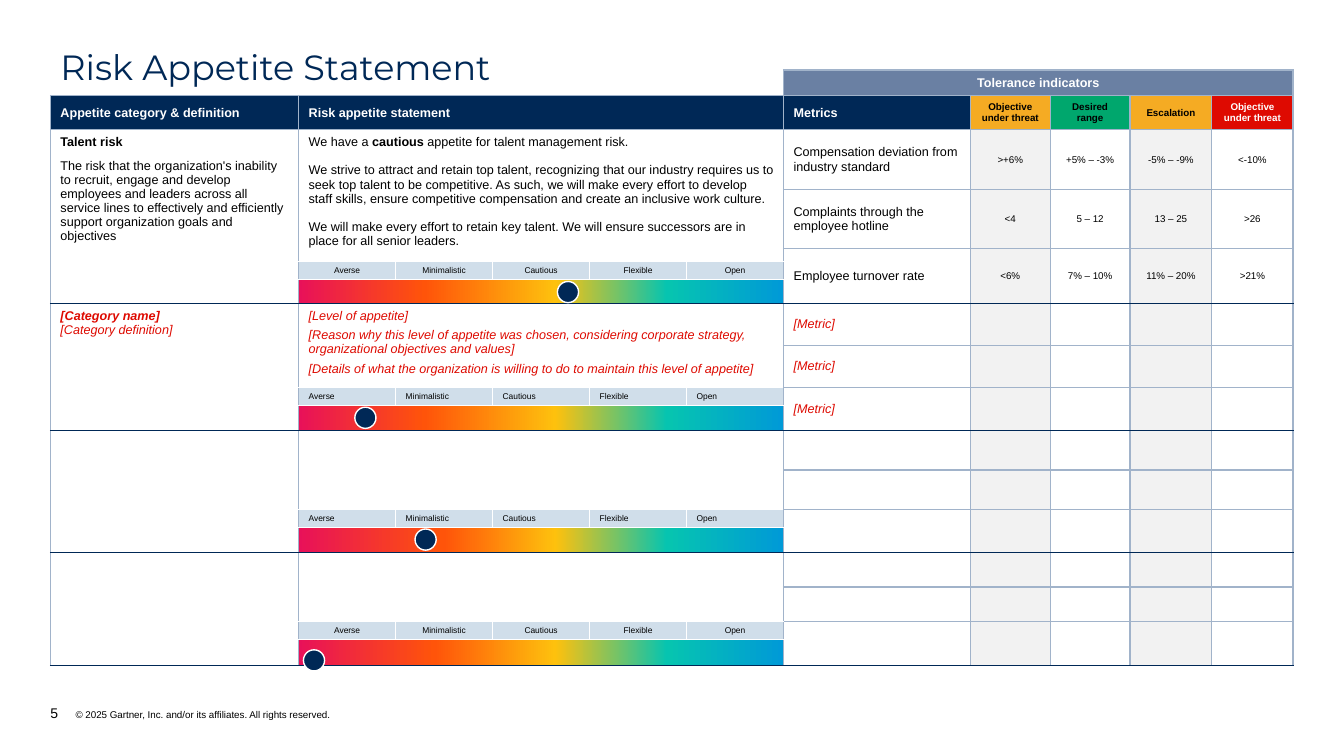
from dataclasses import dataclass

from lxml.etree import SubElement as Sub
from pptx import Presentation
from pptx.dml.color import RGBColor as Rgb
from pptx.enum.shapes import MSO_SHAPE as Shape
from pptx.enum.text import MSO_ANCHOR as Anchor, MSO_AUTO_SIZE as Auto, PP_ALIGN as Align
from pptx.oxml.ns import qn
from pptx.table import Table, _Cell as Cell
from pptx.text.text import TextFrame as Frame
from pptx.util import Pt

NAVY = Rgb(0x00, 0x28, 0x56)
SLATE = Rgb(0x6A, 0x80, 0xA3)
RULE = Rgb(0xA1, 0xB3, 0xCA)
PALE = Rgb(0xD0, 0xDE, 0xEA)
GREY = Rgb(0xF2, 0xF2, 0xF2)
WHITE = Rgb(0xFF, 0xFF, 0xFF)
BLACK = Rgb(0x00, 0x00, 0x00)
AMBER = Rgb(0xF5, 0xAB, 0x23)
GREEN = Rgb(0x00, 0xA7, 0x6D)
RED = Rgb(0xDE, 0x0A, 0x01)
SCALE = [Rgb(0xE8, 0x11, 0x59), Rgb(0xFF, 0x54, 0x0A), Rgb(0xFE, 0xC1, 0x0D),
         Rgb(0x06, 0xC4, 0xB0), Rgb(0x00, 0x9A, 0xD7)]

COLS = [177.3] + [69.3] * 5 + [133.5, 57, 57, 58.5, 58]
ROWS = [18.2, 24.6, 42.5, 42.2, 9.3, 12.9, 17.2, 30, 30, 12.9, 17.9,
        28.2, 28.2, 12.9, 17.9, 24.6, 24.6, 0, 12.9, 18.2]
LEFT, TOP = 36, 50
LEVELS = ["Averse", "Minimalistic", "Cautious", "Flexible", "Open"]
KNOB = 15.1


@dataclass
class Para:
    text: str  # words between asterisks are bold
    gap: float = 0
    bold: bool = False


@dataclass
class Look:
    size: float = 9
    color: Rgb = BLACK
    italic: bool = False
    align: Align = Align.LEFT
    anchor: Anchor = Anchor.MIDDLE
    pad: float = 3.6


@dataclass
class Edge:
    left: Rgb = RULE
    right: Rgb = RULE
    top: Rgb = RULE
    bottom: Rgb = RULE


@dataclass
class Risk:
    top: int  # first table row
    lead: int  # rows above the scale labels
    stop: int  # place of the orange in the scale, percent
    knob: tuple[float, float]  # centre of the marker
    align: Align
    color: Rgb
    italic: bool
    name: list[Para]
    claim: list[Para]
    grid: list[list[str]]


@dataclass
class Head:
    col: int
    wide: int
    text: str
    fill: Rgb
    look: Look


def write(frame: Frame, paras: list[Para], look: Look) -> None:
    for n, item in enumerate(paras):
        para = frame.paragraphs[0] if n == 0 else frame.add_paragraph()
        bits = item.text.split("*")
        para.text = bits[0]
        for bit in bits[1:]:
            para.add_run().text = bit
        para.alignment = look.align
        if n and item.gap:
            para.space_before = Pt(item.gap)
        for k, run in enumerate(para.runs):
            font = run.font
            font.name, font.size = "Arial", Pt(look.size)
            font.color.rgb = look.color
            font.bold = item.bold or k % 2 == 1
            font.italic = look.italic
        if not item.text:
            para._p.get_or_add_endParaRPr().set("sz", "600")


def rule(cell: Cell, edge: Edge) -> None:
    prop = cell._tc.get_or_add_tcPr()
    sides = [("L", edge.left), ("R", edge.right), ("T", edge.top), ("B", edge.bottom)]
    for n, (side, color) in enumerate(sides):
        line = Sub(prop, qn("a:ln" + side), w=str(Pt(1)))
        Sub(Sub(line, qn("a:solidFill")), qn("a:srgbClr"), val=str(color))
        prop.insert(n, line)


def blend(cell: Cell, stop: int) -> None:
    grad = Sub(cell._tc.get_or_add_tcPr(), qn("a:gradFill"), rotWithShape="1")
    stops = Sub(grad, qn("a:gsLst"))
    for pos, color in zip([0, stop, 53, 76, 100], SCALE):
        mark = Sub(stops, qn("a:gs"), pos=str(pos * 1000))
        Sub(mark, qn("a:srgbClr"), val=str(color))
    Sub(grad, qn("a:lin"), ang="0", scaled="0")


def put(table: Table, row: int, col: int, high: int, wide: int, paras: list[Para],
        fill: Rgb | int, look: Look, edge: Edge) -> None:
    cell = table.cell(row, col)
    if high * wide > 1:
        cell.merge(table.cell(row + high - 1, col + wide - 1))
    cell.margin_left = cell.margin_right = Pt(7.2)
    cell.margin_top = cell.margin_bottom = Pt(look.pad)
    cell.vertical_anchor = look.anchor
    write(cell.text_frame, paras, look)
    if isinstance(fill, Rgb):
        cell.fill.solid()
        cell.fill.fore_color.rgb = fill
    else:
        blend(cell, fill)
    rule(cell, edge)


def draw(table: Table, risk: Risk) -> None:
    roof = RULE if risk.top == 2 else NAVY
    label = risk.top + risk.lead
    body = Look(9, risk.color, risk.italic, anchor=Anchor.TOP)
    put(table, risk.top, 0, risk.lead + 2, 1, risk.name, WHITE, body, Edge(top=roof, bottom=NAVY))
    put(table, risk.top, 1, risk.lead, 5, risk.claim, WHITE, body, Edge(top=roof, bottom=WHITE))
    # Scale
    tag = Look(6, align=risk.align, pad=2.88)
    for n, level in enumerate(LEVELS):
        put(table, label, 1 + n, 1, 1, [Para(level)], PALE, tag,
            Edge(RULE if n == 0 else WHITE, WHITE, WHITE, WHITE))
    put(table, label + 1, 1, 1, 5, [Para("")], risk.stop, tag, Edge(top=WHITE, bottom=NAVY))
    # Metrics
    for n, line in enumerate(risk.grid):
        last = n == 2
        edge = Edge(top=roof if n == 0 else RULE, bottom=NAVY if last else RULE)
        for k, text in enumerate(line):
            look = Look(7, align=Align.CENTER) if k else Look(9, risk.color, risk.italic)
            put(table, risk.top + n, 6 + k, risk.lead if last else 1, 1, [Para(text)],
                GREY if k % 2 else WHITE, look, edge)


SMALL = Look(7, align=Align.CENTER)
BIG = Look(color=WHITE)
HEADS = [
    Head(0, 1, "Appetite category & definition", NAVY, BIG),
    Head(1, 5, "Risk appetite statement", NAVY, BIG),
    Head(6, 1, "Metrics", NAVY, BIG),
    Head(7, 1, "Objective under threat", AMBER, SMALL),
    Head(8, 1, "Desired range", GREEN, SMALL),
    Head(9, 1, "Escalation", AMBER, SMALL),
    Head(10, 1, "Objective under threat", RED, Look(7, WHITE, align=Align.CENTER)),
]
NONE = [Para("")]
VOID = [[""] * 5] * 3
RISKS = [
    Risk(2, 3, 26, (405.7, 208.6), Align.CENTER, BLACK, False,
         [Para("Talent risk", bold=True),
          Para("The risk that the organization's inability to recruit, engage and develop employees and leaders across all service lines to effectively and efficiently support organization goals and objectives", 6.9)],
         [Para("We have a *cautious *appetite for talent management risk."),
          Para("We strive to attract and retain top talent, recognizing that our industry requires us to seek top talent to be competitive. As such, we will make every effort to develop staff skills, ensure competitive compensation and create an inclusive work culture.", 10.3),
          Para("We will make every effort to retain key talent. We will ensure successors are in place for all senior leaders.", 10.3)],
         [["Compensation deviation from industry standard", ">+6%", "+5% – -3%", "-5% – -9%", "<-10%"],
          ["Complaints through the employee hotline", "<4", "5 – 12", "13 – 25", ">26"],
          ["Employee turnover rate", "<6%", "7% – 10%", "11% – 20%", ">21%"]]),
    Risk(7, 2, 26, (261, 298.4), Align.LEFT, RED, True,
         [Para("[Category name]", bold=True), Para("[Category definition]")],
         [Para("[Level of appetite]"),
          Para("[Reason why this level of appetite was chosen, considering corporate strategy, organizational objectives and values]", 4),
          Para("[Details of what the organization is willing to do to maintain this level of appetite]", 4)],
         [["[Metric]", "", "", "", ""]] * 3),
    Risk(11, 2, 30, (304, 385.4), Align.LEFT, BLACK, False, NONE, NONE, VOID),
    Risk(15, 3, 28, (224.3, 471.7), Align.CENTER, BLACK, False, NONE, NONE, VOID),
]


def main() -> None:
    deck = Presentation()
    deck.slide_width, deck.slide_height = Pt(960), Pt(540)
    slide = deck.slides.add_slide(deck.slide_layouts[5])
    shapes = slide.shapes

    # Table
    table = shapes.add_table(len(ROWS), len(COLS), Pt(LEFT), Pt(TOP),
                             Pt(sum(COLS)), Pt(sum(ROWS))).table
    table.first_row = table.horz_banding = False
    for col, width in zip(table.columns, COLS):
        col.width = Pt(width)
    for row, height in zip(table.rows, ROWS):
        row.height = Pt(height)
    put(table, 0, 0, 1, 6, NONE, WHITE, BIG, Edge(left=WHITE, top=WHITE))
    put(table, 0, 6, 1, 5, [Para("Tolerance indicators", bold=True)], SLATE,
        Look(color=WHITE, align=Align.CENTER), Edge())
    for head in HEADS:
        put(table, 1, head.col, 1, head.wide, [Para(head.text, bold=True)],
            head.fill, head.look, Edge())
    for risk in RISKS:
        draw(table, risk)

    # Title, in front of the table
    title = shapes.title
    title.left, title.top, title.width, title.height = Pt(36), Pt(32.4), Pt(887.8), Pt(41.8)
    frame = title.text_frame
    frame.text = "Risk Appetite Statement"
    frame.auto_size, frame.vertical_anchor = Auto.NONE, Anchor.TOP
    para = frame.paragraphs[0]
    para.alignment, para.line_spacing = Align.LEFT, 0.9
    font = para.runs[0].font
    font.name, font.size, font.color.rgb = "Montserrat", Pt(25), NAVY
    shapes._spTree.append(title._element)

    # Markers
    for risk in RISKS:
        x, y = risk.knob
        knob = shapes.add_shape(Shape.OVAL, Pt(x - KNOB / 2), Pt(y - KNOB / 2), Pt(KNOB), Pt(KNOB))
        knob.shadow.inherit = False
        knob.fill.solid()
        knob.fill.fore_color.rgb = NAVY
        knob.line.color.rgb, knob.line.width = WHITE, Pt(1)

    # Footer
    frame = shapes.add_textbox(Pt(36), Pt(503.3), Pt(575.3), Pt(12.2)).text_frame
    frame.word_wrap, frame.vertical_anchor = True, Anchor.BOTTOM
    frame.margin_left = frame.margin_right = frame.margin_top = frame.margin_bottom = 0
    para = frame.paragraphs[0]
    para.text = "5"
    para.add_run().text = "\t© 2025 Gartner, Inc. and/or its affiliates. All rights reserved."
    prop = para._p.get_or_add_pPr()
    prop.set("marL", str(Pt(18)))
    prop.set("indent", str(Pt(-18)))
    for run, size in zip(para.runs, [10, 7]):
        run.font.name, run.font.size, run.font.color.rgb = "Arial", Pt(size), BLACK

    deck.save("out.pptx")


if __name__ == "__main__":
    main()
